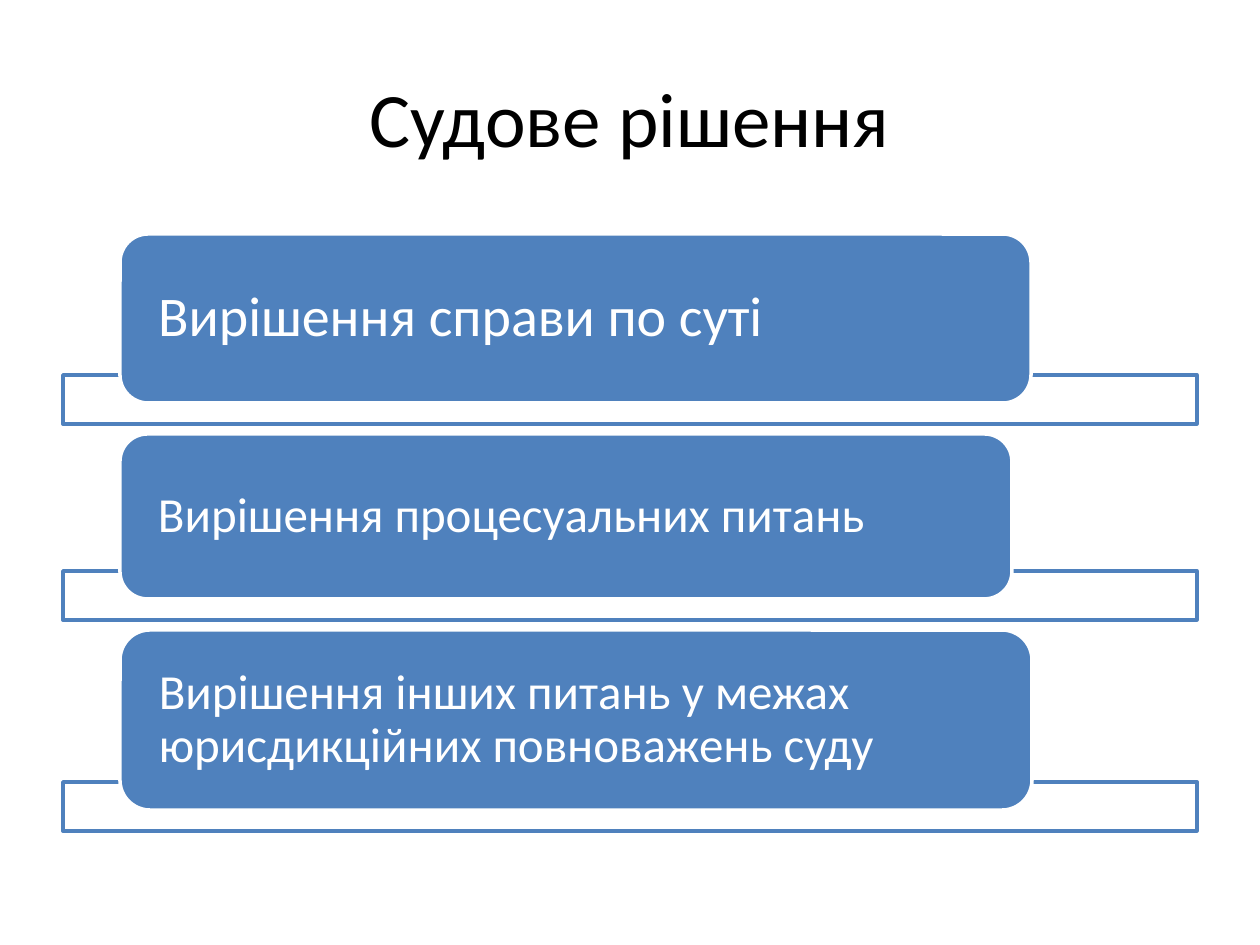
from dataclasses import dataclass

from lxml import etree
from pptx import Presentation
from pptx.dml.color import RGBColor
from pptx.enum.shapes import MSO_SHAPE
from pptx.enum.text import MSO_ANCHOR, PP_ALIGN
from pptx.oxml.ns import qn
from pptx.util import Emu, Pt

RECTANGLE = MSO_SHAPE.RECTANGLE
ROUNDED = MSO_SHAPE.ROUNDED_RECTANGLE
LEFT, CENTER = PP_ALIGN.LEFT, PP_ALIGN.CENTER
MIDDLE = MSO_ANCHOR.MIDDLE

PX_PER_INCH = 126
FONT = "Calibri"
COLORS = {"black": "000000", "white": "FFFFFF", "blue": "4F81BD"}

# Layout of the list, in px
BAR_LEFT, BAR_WIDTH, BAR_HEIGHT = 63, 1134, 49
CARD_LEFT, FIRST_CARD_TOP = 120, 234
CARD_OVERLAP, ITEM_GAP = 28, 10
TEXT_INSET = 30


@dataclass(frozen=True)
class Box:
    left: int
    top: int
    width: int
    height: int

    def emu(self) -> list[Emu]:
        return [px(n) for n in (self.left, self.top, self.width, self.height)]


@dataclass(frozen=True)
class Item:
    text: str
    size: int
    width: int
    height: int


ITEMS = [
    Item("Вирішення справи по суті", 32, 911, 169),
    Item("Вирішення процесуальних питань", 28, 892, 165),
    Item("Вирішення інших питань у межах юрисдикційних повноважень суду", 28, 912, 180),
]


def px(length: int) -> Emu:
    return Emu(round(length * 914400 / PX_PER_INCH))


def color(name: str) -> RGBColor:
    return RGBColor.from_string(COLORS[name])


def add_text(shape, text: str, size: int, color_name: str, alignment, inset: int = 0):
    frame = shape.text_frame
    frame.word_wrap = True
    frame.vertical_anchor = MIDDLE
    frame.margin_left = frame.margin_right = px(inset)
    frame.margin_top = frame.margin_bottom = 0
    paragraph = frame.paragraphs[0]
    paragraph.alignment = alignment
    run = paragraph.add_run()
    run.text = text
    run.font.name = FONT
    run.font.size = Pt(size)
    run.font.color.rgb = color(color_name)
    return paragraph


def add_block(slide, kind, box: Box, fill: str, line: str):
    shape = slide.shapes.add_shape(kind, *box.emu())
    shape.shadow.inherit = False
    shape.fill.solid()
    shape.fill.fore_color.rgb = color(fill)
    shape.line.color.rgb = color(line)
    shape.line.width = Pt(2)
    return shape


def set_opacity(shape, percent: int) -> None:
    fill_color = shape.fill._xPr.find(qn("a:solidFill"))[0]
    etree.SubElement(fill_color, qn("a:alpha"), val=str(percent * 1000))


def add_item(slide, item: Item, top: int) -> int:
    """Draw a bar with its card and return the top of the next card."""
    bar_top = top + item.height - CARD_OVERLAP
    bar_box = Box(BAR_LEFT, bar_top, BAR_WIDTH, BAR_HEIGHT)
    bar = add_block(slide, RECTANGLE, bar_box, "white", "blue")
    set_opacity(bar, 90)

    card_box = Box(CARD_LEFT, top, item.width, item.height)
    card = add_block(slide, ROUNDED, card_box, "blue", "white")
    paragraph = add_text(card, item.text, item.size, "white", LEFT, TEXT_INSET)
    paragraph.line_spacing = 0.9
    return bar_top + BAR_HEIGHT + ITEM_GAP


def main() -> None:
    presentation = Presentation()
    presentation.slide_width = px(1260)
    presentation.slide_height = px(945)
    slide = presentation.slides.add_slide(presentation.slide_layouts[6])

    # Title
    title = slide.shapes.add_textbox(*Box(63, 38, 1134, 157).emu())
    add_text(title, "Судове рішення", 44, "black", CENTER)

    # List of decisions
    top = FIRST_CARD_TOP
    for item in ITEMS:
        top = add_item(slide, item, top)

    presentation.save("out.pptx")


if __name__ == "__main__":
    main()
